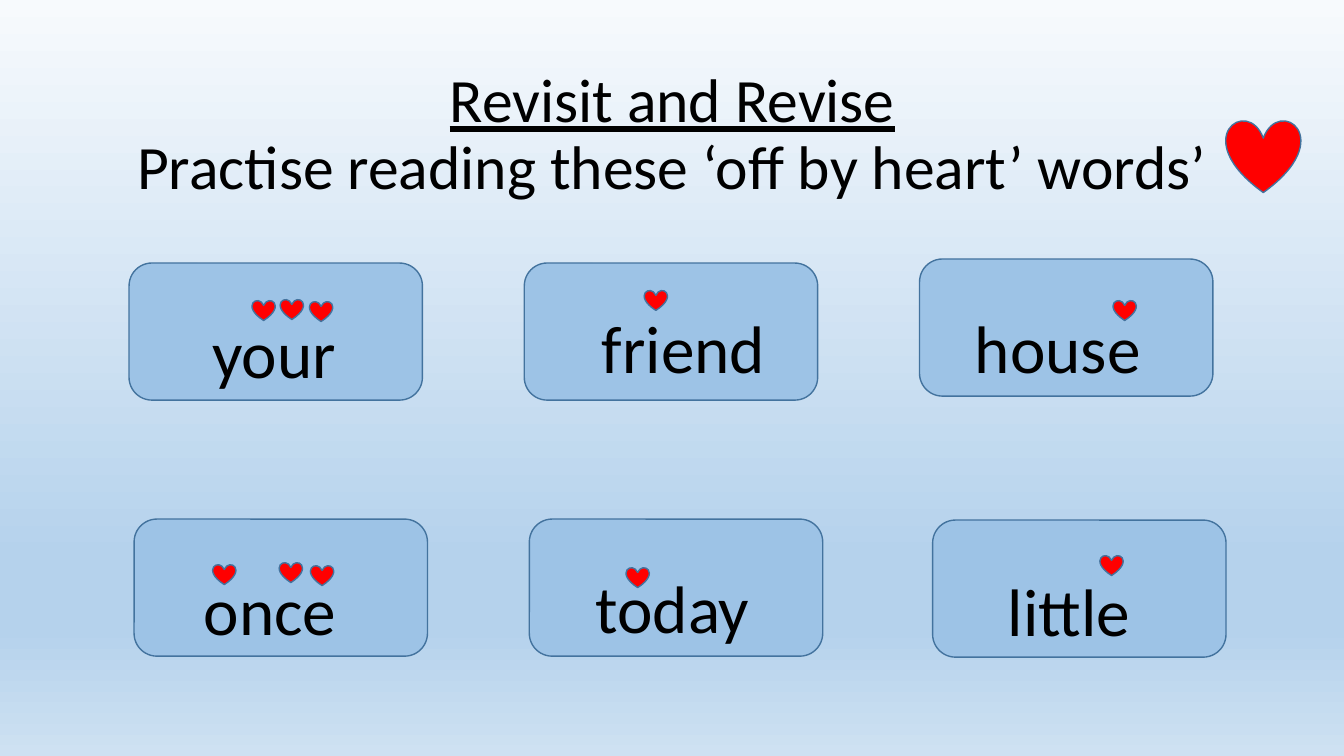
from copy import deepcopy
from dataclasses import dataclass

from pptx import Presentation
from pptx.dml.color import RGBColor
from pptx.enum.shapes import MSO_SHAPE
from pptx.enum.text import MSO_ANCHOR, MSO_AUTO_SIZE, PP_ALIGN
from pptx.oxml.ns import qn
from pptx.util import Inches, Pt


@dataclass(frozen=True)
class Theme:
    font: str = "Calibri"
    ink: str = "000000"
    card: str = "9DC3E6"
    outline: str = "43739E"
    heart: str = "FF0000"
    sky: tuple = ((0, "F7FAFD"), (0.74, "B5D2EC"), (0.83, "B5D2EC"), (1, "CEE1F2"))
    title_size: int = 44
    word_size: int = 48


theme = Theme()


def write(paragraph, text, size, underline=False):
    paragraph.alignment = PP_ALIGN.CENTER
    run = paragraph.add_run()
    run.text = text
    run.font.name = theme.font
    run.font.size = Pt(size)
    run.font.underline = underline
    run.font.color.rgb = RGBColor.from_string(theme.ink)


def draw(kind, left, top, width, height, fill):
    shape = slide.shapes.add_shape(kind, Inches(left), Inches(top), Inches(width), Inches(height))
    shape.shadow.inherit = False
    shape.fill.solid()
    shape.fill.fore_color.rgb = RGBColor.from_string(fill)
    shape.line.color.rgb = RGBColor.from_string(theme.outline)
    shape.line.width = Pt(1)


deck = Presentation()
deck.slide_width, deck.slide_height = Inches(13.33), Inches(7.5)
slide = deck.slides.add_slide(deck.slide_layouts[5])

sky = slide.background.fill
sky.gradient()
sky.gradient_angle = 270
sky_stops = slide.element.find(".//" + qn("a:gsLst"))
while len(sky_stops) < len(theme.sky):
    sky_stops.append(deepcopy(sky_stops[0]))
for stop, (position, color) in zip(sky.gradient_stops, theme.sky):
    stop.position = position
    stop.color.rgb = RGBColor.from_string(color)

title = slide.shapes.title
title.left, title.top = Inches(0.92), Inches(0.4)
title.width, title.height = Inches(11.5), Inches(1.9)
title.text_frame.auto_size = MSO_AUTO_SIZE.NONE
title.text_frame.vertical_anchor = MSO_ANCHOR.MIDDLE
heading = title.text_frame.paragraphs[0]
heading.line_spacing = 0.9
write(heading, "Revisit and Revise", theme.title_size, underline=True)
heading.add_line_break()
write(heading, "Practise reading these ‘off by heart’ words’", theme.title_size)
draw(MSO_SHAPE.HEART, 12.16, 1.19, 0.74, 0.72, theme.heart)

grid_left, grid_top = 1.28, 2.61
column_step, row_step = 3.92, 2.54
card_width, card_height = 2.91, 1.36
word_width, word_height = 2.12, 0.91
heart_width, heart_height = 0.23, 0.2

word_cards = [
    ("your", (0, 0), (0.38, 0.43), [(1.22, 0.37), (1.5, 0.36), (1.79, 0.38)]),
    ("friend", (0, 0), (0.52, 0.38), [(1.19, 0.27)]),
    ("house", (0, -0.04), (0.31, 0.42), [(1.92, 0.41)]),
    ("once", (0.05, 0), (0.29, 0.44), [(0.78, 0.45), (1.44, 0.43), (1.75, 0.46)]),
    ("today", (0.05, 0), (0.36, 0.42), [(0.96, 0.48)]),
    ("little", (0.13, 0.01), (0.29, 0.44), [(1.66, 0.35)]),
]

for index, (word, nudge, word_offset, heart_offsets) in enumerate(word_cards):
    row, column = divmod(index, 3)
    left = grid_left + column * column_step + nudge[0]
    top = grid_top + row * row_step + nudge[1]
    draw(MSO_SHAPE.ROUNDED_RECTANGLE, left, top, card_width, card_height, theme.card)

    label = slide.shapes.add_textbox(
        Inches(left + word_offset[0]), Inches(top + word_offset[1]),
        Inches(word_width), Inches(word_height),
    ).text_frame
    label.word_wrap = True
    label.auto_size = MSO_AUTO_SIZE.SHAPE_TO_FIT_TEXT
    write(label.paragraphs[0], word, theme.word_size)

    for across, down in heart_offsets:
        draw(MSO_SHAPE.HEART, left + across, top + down, heart_width, heart_height, theme.heart)

deck.save("out.pptx")
